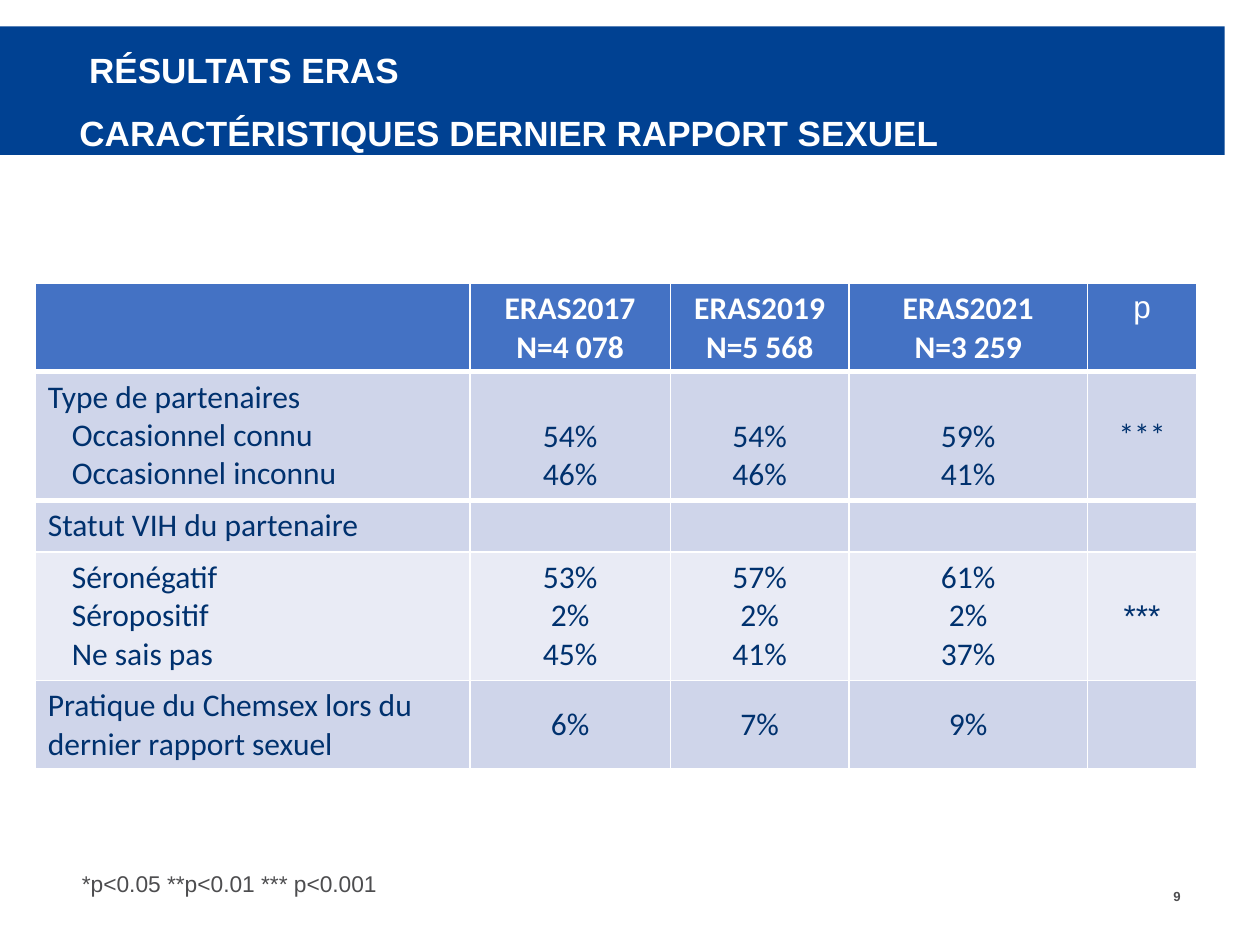
from dataclasses import dataclass

from lxml.etree import SubElement
from pptx import Presentation
from pptx.dml.color import RGBColor as Rgb
from pptx.enum.shapes import MSO_SHAPE as Shape
from pptx.enum.text import MSO_ANCHOR as Anchor, PP_ALIGN as Align
from pptx.oxml.ns import qn
from pptx.util import Inches, Pt


@dataclass(frozen=True)
class Theme:
    """Colours, fonts and type sizes of the slide."""
    banner: str = "004192"
    header: str = "4472C4"
    band: str = "CFD5EA"
    light: str = "E9EBF5"
    white: str = "FFFFFF"
    navy: str = "00316E"
    grey: str = "4D4D4F"
    sans: str = "Arial"
    body: str = "Calibri"
    title_size: float = 20
    table_size: float = 18
    note_size: float = 13
    number_size: float = 7.5
    thin: float = 1
    thick: float = 3


THEME = Theme()
WIDTH, HEIGHT = Inches(10), Inches(7.5)
COLUMNS = (34.5, 15.9, 14.2, 18.9, 8.7)
ROW_HEIGHTS = (9.33, 13.6, 5.47, 13.6, 9.33)
ROW_FILLS = (THEME.header, THEME.band, THEME.band, THEME.light, THEME.band)
THICK_EDGES = {(0, "B"), (1, "T"), (1, "B"), (2, "T")}
ROWS = (
    ("", "ERAS2017\nN=4 078", "ERAS2019\nN=5 568", "ERAS2021\nN=3 259", "p"),
    ("Type de partenaires\n\tOccasionnel connu\n\tOccasionnel inconnu",
     "54%\n46%", "54%\n46%", "59%\n41%", "***"),
    ("Statut VIH du partenaire", "", "", "", ""),
    ("\tSéronégatif\n\tSéropositif\n\tNe sais pas",
     "53%\n2%\n45%", "57%\n2%\n41%", "61%\n2%\n37%", "***"),
    ("Pratique du Chemsex lors du dernier rapport sexuel", "6%", "7%", "9%", ""),
)


def across(percent):
    """Return a percentage of the slide width."""
    return round(WIDTH * percent / 100)


def down(percent):
    """Return a percentage of the slide height."""
    return round(HEIGHT * percent / 100)


def place(left, top, width, height):
    """Turn percentages of the slide into a position and size."""
    return across(left), down(top), across(width), down(height)


def add_run(paragraph, words, size, color, font=THEME.sans, bold=False):
    """Append one styled run to a paragraph."""
    run = paragraph.add_run()
    run.text = words
    run.font.size = Pt(size)
    run.font.name = font
    run.font.bold = bold
    run.font.color.rgb = Rgb.from_string(color)


def add_banner(slide):
    """Draw the blue band behind the title."""
    banner = slide.shapes.add_shape(Shape.RECTANGLE, *place(0, 2.8, 97.2, 13.6))
    banner.shadow.inherit = False
    banner.fill.solid()
    banner.fill.fore_color.rgb = Rgb.from_string(THEME.banner)
    banner.line.fill.background()


def add_label(slide, area, lines, size, color, bold=False, align=Align.LEFT,
              anchor=Anchor.TOP, spacing=None):
    """Add a text box whose lines share one paragraph."""
    frame = slide.shapes.add_textbox(*place(*area)).text_frame
    frame.word_wrap = True
    frame.vertical_anchor = anchor
    frame.margin_left = frame.margin_right = Inches(0.04)
    frame.margin_top = frame.margin_bottom = 0
    paragraph = frame.paragraphs[0]
    paragraph.alignment = align
    if spacing:
        paragraph.line_spacing = spacing
    for index, line in enumerate(lines):
        if index:
            paragraph.add_line_break()
        add_run(paragraph, line, size, color, bold=bold)


def set_borders(cell, row):
    """Give a cell white edges, thick around the first data row."""
    properties = cell._tc.get_or_add_tcPr()
    for side in "LRTB":
        weight = THEME.thick if (row, side) in THICK_EDGES else THEME.thin
        edge = SubElement(properties, qn(f"a:ln{side}"), w=str(Pt(weight)))
        SubElement(SubElement(edge, qn("a:solidFill")), qn("a:srgbClr"), val=THEME.white)


def cell_anchor(row, column):
    """Choose the vertical alignment of a cell."""
    if row == 0 or column == 0:
        return Anchor.TOP
    is_share = column < len(COLUMNS) - 1
    return Anchor.BOTTOM if row == 1 and is_share else Anchor.MIDDLE


def fill_cell(cell, row, column, content):
    """Style one table cell and write its lines, indenting tabbed ones."""
    set_borders(cell, row)
    cell.fill.solid()
    cell.fill.fore_color.rgb = Rgb.from_string(ROW_FILLS[row])
    cell.vertical_anchor = cell_anchor(row, column)
    is_p_value = column == len(COLUMNS) - 1
    font = THEME.sans if is_p_value and row in (0, 3) else THEME.body
    color = THEME.navy if row else THEME.white
    frame = cell.text_frame
    for index, line in enumerate(content.split("\n")):
        paragraph = frame.add_paragraph() if index else frame.paragraphs[0]
        paragraph.font.size = Pt(THEME.table_size)
        paragraph.alignment = Align.CENTER if column else Align.LEFT
        if line.startswith("\t"):
            paragraph._p.get_or_add_pPr().set("marL", str(Inches(0.19)))
        if line:
            add_run(paragraph, line.strip(), THEME.table_size, color, font,
                    bold=row == 0 and not is_p_value)


def add_results(slide):
    """Add the table comparing the three survey years."""
    area = place(2.8, 30, sum(COLUMNS), sum(ROW_HEIGHTS))
    table = slide.shapes.add_table(len(ROWS), len(COLUMNS), *area).table
    for column, width in zip(table.columns, COLUMNS):
        column.width = across(width)
    for row, height in zip(table.rows, ROW_HEIGHTS):
        row.height = down(height)
    for row, contents in enumerate(ROWS):
        for column, content in enumerate(contents):
            fill_cell(table.cell(row, column), row, column, content)


def main():
    """Build the slide and save it."""
    deck = Presentation()
    deck.slide_width, deck.slide_height = WIDTH, HEIGHT
    slide = deck.slides.add_slide(deck.slide_layouts[6])
    add_banner(slide)
    add_label(slide, (91.4, 94, 2.7, 1.73), ["9"], THEME.number_size, THEME.grey,
              bold=True, align=Align.RIGHT)
    add_label(slide, (5.9, 2.8, 74.8, 13.6),
              [" RÉSULTATS ERAS", "CARACTÉRISTIQUES DERNIER RAPPORT SEXUEL"],
              THEME.title_size, THEME.white, bold=True, anchor=Anchor.MIDDLE, spacing=1.5)
    add_results(slide)
    add_label(slide, (6.1, 92, 26.8, 2.93), ["*p<0.05 **p<0.01 *** p<0.001"],
              THEME.note_size, THEME.grey)
    deck.save("out.pptx")


if __name__ == "__main__":
    main()
